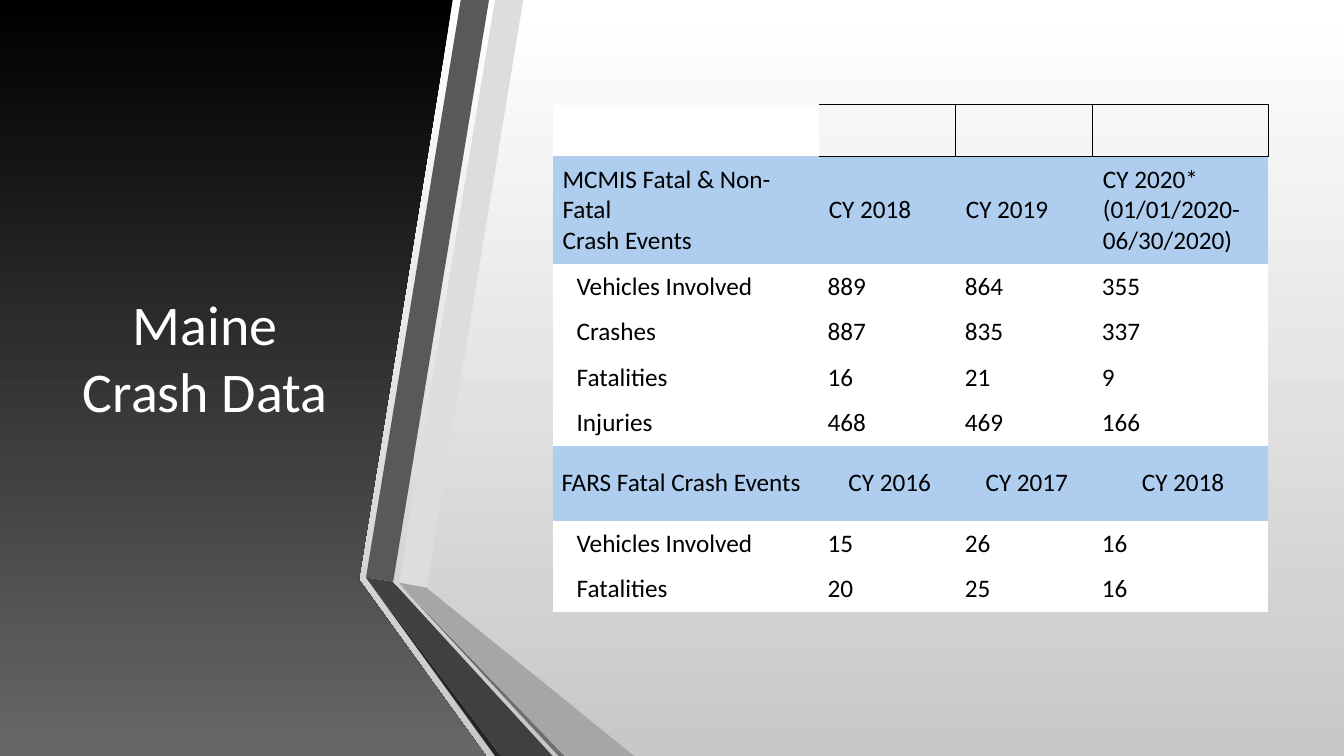
from lxml.etree import SubElement
from pptx import Presentation
from pptx.dml.color import RGBColor
from pptx.enum.shapes import MSO_SHAPE
from pptx.enum.text import MSO_ANCHOR, PP_ALIGN
from pptx.oxml.ns import qn
from pptx.util import Inches, Pt

COLUMNS, ROWS = 13.33, 7.5  # the grid has one-inch cells
NO_GRID_STYLE = "{2D5ABB26-0587-4C30-8999-92F81FD0307C}"
WHITE, BLACK, SILVER, GREY, BLUE = "FFFFFF", "000000", "C8C8C8", "676767", "AFCEEF"

PANEL = [(0, 0), (4.49, 0), (3.56, 5.75), (4.82, 7.5), (0, 7.5)]
BANDS = [
    ("DDDDDD", [(3.96, 5.78), (4.23, 5.83), (5.19, 0), (4.91, 0)]),
    ("595959", [(4.85, 0), (4.57, 0), (3.63, 5.73), (3.9, 5.77)]),
    ("262626", [(3.63, 5.73), (4.91, 7.5), (4.97, 7.5)]),
    ("6E6E6E", [(3.96, 5.79), (5.54, 7.5), (5.6, 7.5)]),
    ("A6A6A6", [(3.96, 5.78), (5.6, 7.5), (6.29, 7.5), (4.23, 5.83)]),
    ("404040", [(5.48, 7.5), (3.95, 5.83), (3.89, 5.77), (3.63, 5.73), (4.97, 7.5)]),
]

COLUMN_WIDTHS = [2.64, 1.36, 1.36, 1.74]
ROW_HEIGHTS = {"blank": 0.51, "mcmis": 1.07, "data": 0.45, "fars": 0.75}
CRASH_ROWS = [
    ("blank", ["", "", "", ""]),
    ("mcmis", ["MCMIS Fatal & Non-Fatal\nCrash Events", "CY 2018", "CY 2019",
               "CY 2020*\n(01/01/2020-06/30/2020)"]),
    ("data", ["Vehicles Involved", "889", "864", "355"]),
    ("data", ["Crashes", "887", "835", "337"]),
    ("data", ["Fatalities", "16", "21", "9"]),
    ("data", ["Injuries", "468", "469", "166"]),
    ("fars", ["FARS Fatal Crash Events", "CY 2016", "CY 2017", "CY 2018"]),
    ("data", ["Vehicles Involved", "15", "26", "16"]),
    ("data", ["Fatalities", "20", "25", "16"]),
]


def color(hex_text):
    return RGBColor.from_string(hex_text)


def fade_down(fill, top, bottom):
    fill.gradient()
    fill.gradient_angle = 270
    for stop, shade in zip(fill.gradient_stops, (top, bottom)):
        stop.color.rgb = color(shade)


def outline_cell(cell, sides):
    """Draw a thin black border on the given sides, named L, R, T and B."""
    properties = cell._tc.get_or_add_tcPr()
    for side in sides:
        line = SubElement(properties, qn(f"a:ln{side}"), w=str(Pt(1)))
        SubElement(SubElement(line, qn("a:solidFill")), qn("a:srgbClr"), val=BLACK)


class SlideBuilder:
    font = "Calibri"

    def __init__(self, deck):
        self.page = deck.slides.add_slide(deck.slide_layouts[6])

    def set_text(self, para, text, size, shade, align):
        para.text = text
        para.alignment = align
        para.font.name = self.font
        para.font.size = Pt(size)
        para.font.color.rgb = color(shade)

    def backdrop(self, top, bottom):
        fade_down(self.page.background.fill, top, bottom)
        sheet = self.page.shapes.add_shape(
            MSO_SHAPE.RECTANGLE, 0, 0, Inches(COLUMNS), Inches(ROWS))
        sheet.shadow.inherit = False
        sheet.line.fill.background()
        fade_down(sheet.fill, top, bottom)

    def polygon(self, points):
        start, *rest = [(Inches(x), Inches(y)) for x, y in points]
        builder = self.page.shapes.build_freeform(*start)
        builder.add_line_segments(rest, close=True)
        shape = builder.convert_to_shape()
        shape.shadow.inherit = False
        shape.line.fill.background()
        return shape

    def band(self, shade, points):
        fill = self.polygon(points).fill
        fill.solid()
        fill.fore_color.rgb = color(shade)

    def title(self, text, *place):
        box = self.page.shapes.add_textbox(*map(Inches, place))
        frame = box.text_frame
        frame.word_wrap = True
        frame.vertical_anchor = MSO_ANCHOR.MIDDLE
        self.set_text(frame.paragraphs[0], text, 40, WHITE, PP_ALIGN.CENTER)

    def crash_table(self, left, top):
        heights = [ROW_HEIGHTS[kind] for kind, _ in CRASH_ROWS]
        frame = self.page.shapes.add_table(
            len(CRASH_ROWS), len(COLUMN_WIDTHS), Inches(left), Inches(top),
            Inches(sum(COLUMN_WIDTHS)), Inches(sum(heights)))
        table = frame.table
        table.first_row = table.horz_banding = False
        next(table._tbl.iter(qn("a:tableStyleId"))).text = NO_GRID_STYLE
        for column, width in zip(table.columns, COLUMN_WIDTHS):
            column.width = Inches(width)
        for row, height, (kind, texts) in zip(table.rows, heights, CRASH_ROWS):
            row.height = Inches(height)
            for index, (cell, text) in enumerate(zip(row.cells, texts)):
                self.crash_cell(cell, text, kind, index == 0)

    def crash_cell(self, cell, text, kind, is_label):
        if kind == "blank" and not is_label:
            outline_cell(cell, "RTB")
            return
        cell.fill.solid()
        cell.fill.fore_color.rgb = color(BLUE if kind in ("mcmis", "fars") else WHITE)
        if kind == "blank":
            return
        left, right, edge = (0.1, 0.1, 0.05) if kind == "mcmis" else (0.09, 0.04, 0.04)
        if kind == "data" and is_label:
            left = 0.24
        cell.margin_left, cell.margin_right = Inches(left), Inches(right)
        cell.margin_top = cell.margin_bottom = Inches(edge)
        cell.vertical_anchor = MSO_ANCHOR.MIDDLE
        centred = kind == "fars" and not is_label
        self.set_text(cell.text_frame.paragraphs[0], text, 18, BLACK,
                      PP_ALIGN.CENTER if centred else PP_ALIGN.LEFT)


def main():
    deck = Presentation()
    deck.slide_width, deck.slide_height = Inches(COLUMNS), Inches(ROWS)
    slide = SlideBuilder(deck)
    slide.backdrop(WHITE, SILVER)
    fade_down(slide.polygon(PANEL).fill, BLACK, GREY)
    slide.title("Maine Crash Data", 0.59, 0.75, 2.89, 5.58)
    for shade, points in BANDS:
        slide.band(shade, points)
    slide.crash_table(5.48, 1.04)
    deck.save("out.pptx")


if __name__ == "__main__":
    main()
